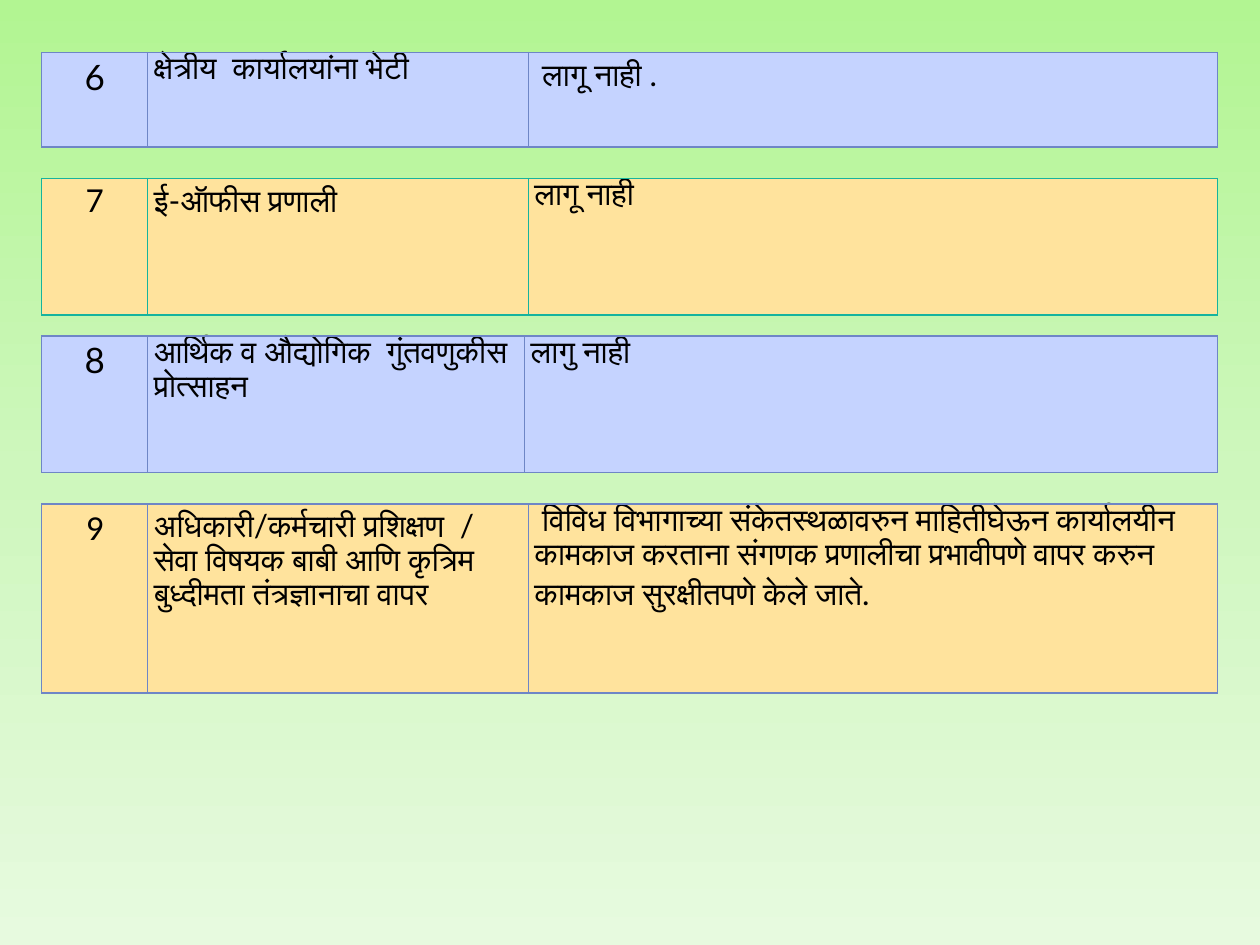
from copy import deepcopy

from lxml import etree
from pptx import Presentation
from pptx.dml.color import RGBColor
from pptx.enum import text
from pptx.oxml.ns import qn
from pptx.util import Pt

BLUE, YELLOW = "C5D3FF", "FFE39D"
BLUE_LINE, TEAL_LINE = "6E86C6", "16B39E"
LEFT, WIDTH = 23.9, 671.8
NUMBER_WIDTH = 60.5

# top, height, topic column width, fill, border, number size, number font, texts
ITEMS = [
    (30, 54, 217.4, BLUE, BLUE_LINE, 20, "Lato",
     ("6", "क्षेत्रीय  कार्यालयांना भेटी", " लागू नाही .")),
    (102, 78, 217.4, YELLOW, TEAL_LINE, 18, "Lato",
     ("7", "ई-ऑफीस प्रणाली", "लागू नाही")),
    (192, 78, 215.3, BLUE, BLUE_LINE, 20, "Lato",
     ("8", "आर्थिक व औद्योगिक  गुंतवणुकीस प्रोत्साहन", "लागु नाही")),
    (288, 108, 217.4, YELLOW, BLUE_LINE, 20, "Calibri",
     ("9", "अधिकारी/कर्मचारी प्रशिक्षण  / सेवा विषयक बाबी आणि कृत्रिम "
      "बुध्दीमता तंत्रज्ञानाचा वापर",
      " विविध विभागाच्या संकेतस्थळावरुन माहितीघेऊन कार्यालयीन कामकाज करताना "
      "संगणक प्रणालीचा प्रभावीपणे वापर करुन कामकाज सुरक्षीतपणे केले जाते.")),
]


def color(value):
    return RGBColor.from_string(value)


def set_background(slide, colors):
    """Spread the colours evenly from top to bottom."""
    fill = slide.background.fill
    fill.gradient()
    fill.gradient_angle = 270
    stop_list = next(slide.element.iter(qn("a:gsLst")))
    while len(stop_list) < len(colors):
        stop_list.append(deepcopy(stop_list[-1]))
    for index, (stop, value) in enumerate(zip(fill.gradient_stops, colors)):
        stop.position = index / (len(colors) - 1)
        stop.color.rgb = color(value)


def set_borders(cell, value):
    properties = cell._tc.get_or_add_tcPr()
    for index, side in enumerate(("a:lnL", "a:lnR", "a:lnT", "a:lnB")):
        line = etree.Element(qn(side), w=str(Pt(0.75)))
        fill = etree.SubElement(line, qn("a:solidFill"))
        etree.SubElement(fill, qn("a:srgbClr"), val=value)
        properties.insert(index, line)


def format_cell(cell, content, size, font, fill, border):
    cell.margin_left = cell.margin_right = Pt(3.6)
    cell.margin_top = cell.margin_bottom = 0
    cell.fill.solid()
    cell.fill.fore_color.rgb = color(fill)
    set_borders(cell, border)
    cell.text_frame.text = content
    paragraph = cell.text_frame.paragraphs[0]
    paragraph.line_spacing = 1.07
    run_font = paragraph.runs[0].font
    run_font.size = Pt(size)
    run_font.name = font
    run_font.bold = False
    run_font.color.rgb = color("000000")


def add_item(slide, left, top, width, height, topic_width, fill, border,
             number_size, number_font, contents):
    table = slide.shapes.add_table(
        1, 3, Pt(left), Pt(top), Pt(width), Pt(height)).table
    table.first_row = table.horz_banding = False
    widths = (NUMBER_WIDTH, topic_width, width - NUMBER_WIDTH - topic_width)
    for column, column_width in zip(table.columns, widths):
        column.width = Pt(column_width)
    styles = ((number_size, number_font), (18, "Lato"), (18, "Lato"))
    for cell, content, (size, font) in zip(table.rows[0].cells, contents, styles):
        format_cell(cell, content, size, font, fill, border)
    number = table.cell(0, 0).text_frame.paragraphs[0]
    number.alignment = text.PP_ALIGN.CENTER


def main():
    presentation = Presentation()
    presentation.slide_width, presentation.slide_height = Pt(720), Pt(540)
    slide = presentation.slides.add_slide(presentation.slide_layouts[6])
    set_background(slide, ("B2F592", "CEF7BD", "E7FADF"))
    for top, height, *details in ITEMS:
        add_item(slide, LEFT, top, WIDTH, height, *details)
    presentation.save("out.pptx")


if __name__ == "__main__":
    main()
